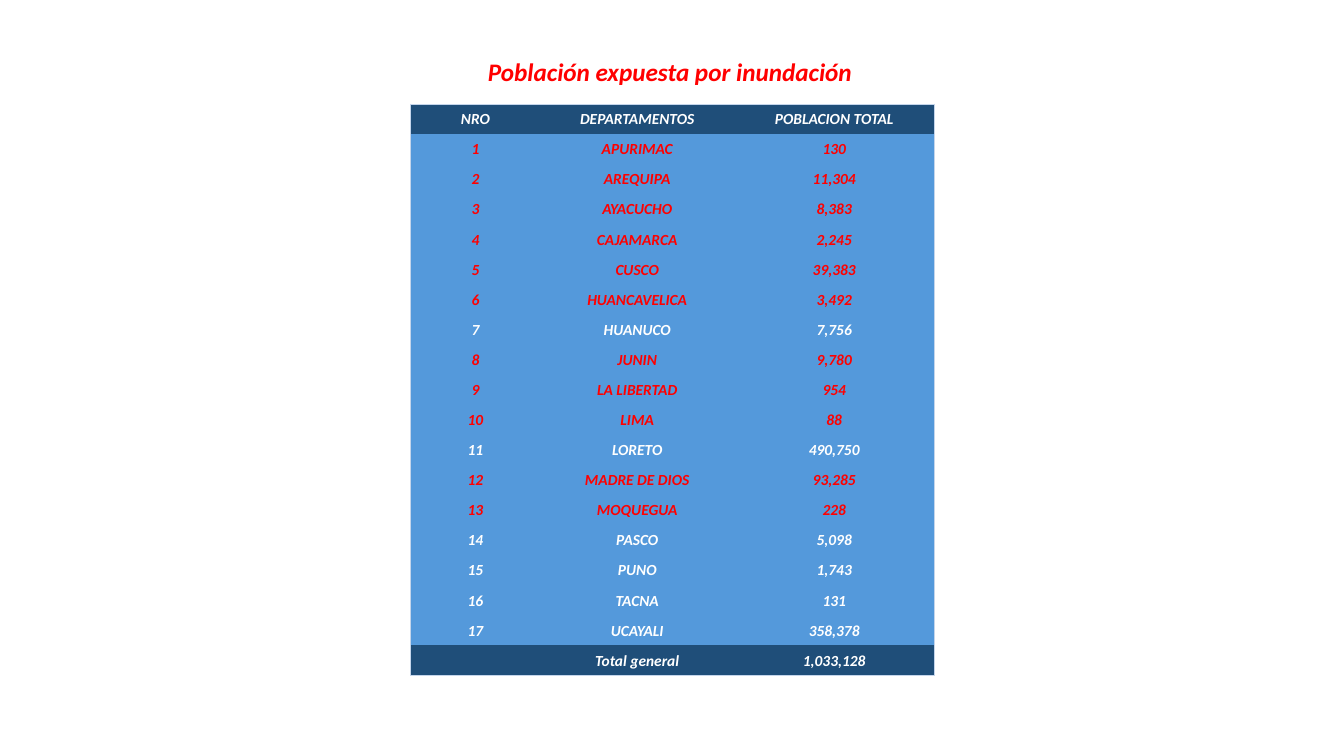
"""Build a slide with a table of the population exposed to floods."""
import dataclasses

import lxml.etree
import pptx
import pptx.dml.color
import pptx.enum.text
import pptx.oxml.ns
import pptx.util

Pt = pptx.util.Pt
qn = pptx.oxml.ns.qn
CENTER = pptx.enum.text.PP_ALIGN.CENTER
MIDDLE = pptx.enum.text.MSO_ANCHOR.MIDDLE


@dataclasses.dataclass(frozen=True)
class Theme:
    font: str = "Calibri"
    title: int = 18
    body: int = 11
    red: str = "FF0000"
    white: str = "FFFFFF"
    navy: str = "1F4E79"
    blue: str = "5499DB"
    edge: str = "C4D5EB"
    line: float = 0.5


THEME = Theme()
HEAD = ("NRO", "DEPARTAMENTOS", "POBLACION TOTAL")
TOTAL = ("", "Total general", "1,033,128")
PLACES = (
    ("APURIMAC", 130), ("AREQUIPA", 11304), ("AYACUCHO", 8383),
    ("CAJAMARCA", 2245), ("CUSCO", 39383), ("HUANCAVELICA", 3492),
    ("HUANUCO", 7756), ("JUNIN", 9780), ("LA LIBERTAD", 954),
    ("LIMA", 88), ("LORETO", 490750), ("MADRE DE DIOS", 93285),
    ("MOQUEGUA", 228), ("PASCO", 5098), ("PUNO", 1743),
    ("TACNA", 131), ("UCAYALI", 358378),
)
PLAIN = {"HUANUCO", "LORETO", "PASCO", "PUNO", "TACNA", "UCAYALI"}
WIDTHS = (92.9, 138.2, 143.3)
HEIGHT = 21.49


def put_text(frame, text, size, color):
    frame.text = text
    para = frame.paragraphs[0]
    para.alignment = CENTER
    for run in para.runs:
        font = run.font
        font.name, font.size = THEME.font, Pt(size)
        font.bold = font.italic = True
        font.color.rgb = pptx.dml.color.RGBColor.from_string(color)
    if not text:
        end = lxml.etree.SubElement(para._p, qn("a:endParaRPr"))
        end.set("sz", str(size * 100))


def set_edges(cell, edges):
    props = cell._tc.get_or_add_tcPr()
    for spot, (side, shown) in enumerate(edges.items()):
        line = lxml.etree.Element(qn(f"a:ln{side}"), w=str(Pt(THEME.line)))
        if shown:
            fill = lxml.etree.SubElement(line, qn("a:solidFill"))
            lxml.etree.SubElement(fill, qn("a:srgbClr"), val=THEME.edge)
        else:
            lxml.etree.SubElement(line, qn("a:noFill"))
        props.insert(spot, line)


def fill_cell(cell, text, color, back):
    cell.margin_left = cell.margin_right = cell.margin_top = Pt(0.7)
    cell.margin_bottom = Pt(0)
    cell.vertical_anchor = MIDDLE
    cell.fill.solid()
    cell.fill.fore_color.rgb = pptx.dml.color.RGBColor.from_string(back)
    put_text(cell.text_frame, text, THEME.body, color)


def add_title(slide, text):
    frame = slide.shapes.add_textbox(
        Pt(340), Pt(36.7), Pt(277.2), Pt(29)).text_frame
    frame.word_wrap = False
    put_text(frame, text, THEME.title, THEME.red)


def add_grid(slide, rows):
    grid = slide.shapes.add_table(
        len(rows), len(WIDTHS), Pt(293.2), Pt(74.2),
        Pt(sum(WIDTHS)), Pt(HEIGHT * len(rows))).table
    for col, width in zip(grid.columns, WIDTHS):
        col.width = Pt(width)
    for row in grid.rows:
        row.height = Pt(HEIGHT)
    end_row, end_col = len(rows) - 1, len(WIDTHS) - 1
    for r, (texts, color, back) in enumerate(rows):
        for c, text in enumerate(texts):
            cell = grid.cell(r, c)
            fill_cell(cell, text, color, back)
            set_edges(cell, {"L": c == 0, "R": c == end_col,
                             "T": r == 0, "B": r == end_row})


def main():
    deck = pptx.Presentation()
    deck.slide_width, deck.slide_height = Pt(960), Pt(540)
    slide = deck.slides.add_slide(deck.slide_layouts[6])
    add_title(slide, "Población expuesta por inundación")
    rows = [(HEAD, THEME.white, THEME.navy)]
    for rank, (place, count) in enumerate(PLACES, 1):
        color = THEME.white if place in PLAIN else THEME.red
        rows.append(((str(rank), place, f"{count:,}"), color, THEME.blue))
    rows.append((TOTAL, THEME.white, THEME.navy))
    add_grid(slide, rows)
    deck.save("out.pptx")


if __name__ == "__main__":
    main()
